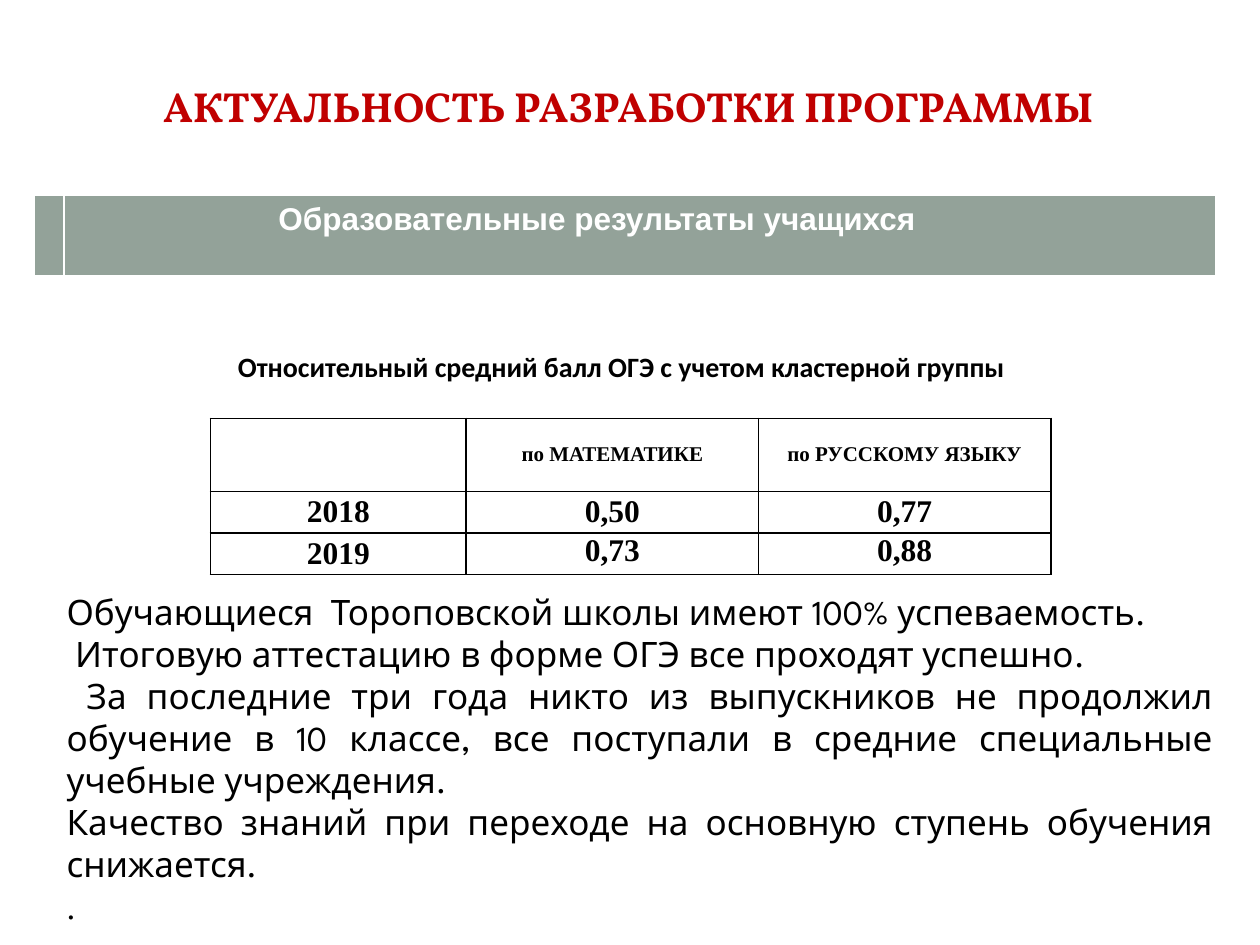
from lxml import etree
from pptx import Presentation
from pptx.dml.color import RGBColor
from pptx.enum.shapes import MSO_SHAPE
from pptx.enum.text import MSO_ANCHOR, PP_ALIGN
from pptx.oxml.ns import qn
from pptx.util import Inches, Pt

LEFT, CENTER, JUSTIFY = PP_ALIGN.LEFT, PP_ALIGN.CENTER, PP_ALIGN.JUSTIFY
TOP, MIDDLE = MSO_ANCHOR.TOP, MSO_ANCHOR.MIDDLE
RECT, ROUNDED = MSO_SHAPE.RECTANGLE, MSO_SHAPE.ROUNDED_RECTANGLE

RED = RGBColor(0xC0, 0x00, 0x00)
SAGE = RGBColor(0x93, 0xA2, 0x99)
BLACK = RGBColor(0x00, 0x00, 0x00)
WHITE = RGBColor(0xFF, 0xFF, 0xFF)

SERIF = "Times New Roman"


class SlideBuilder:
    def __init__(self, slide):
        self.slide = slide

    def style(self, p, font, size, color=BLACK, bold=True, align=LEFT):
        p.alignment = align
        p.font.name = font
        p.font.size = Pt(size)
        p.font.bold = bold
        p.font.color.rgb = color

    def panel(self, shape, box):
        sp = self.slide.shapes.add_shape(shape, *map(Inches, box))
        sp.shadow.inherit = False
        sp.fill.solid()
        sp.fill.fore_color.rgb = WHITE
        sp.line.fill.background()
        return sp

    def text(self, box, lines, anchor=MIDDLE, wrap=True, top=0.05, **style):
        sp = self.slide.shapes.add_textbox(*map(Inches, box))
        tf = sp.text_frame
        tf.word_wrap = wrap
        tf.vertical_anchor = anchor
        tf.margin_top = Inches(top)
        tf.text = "\n".join(lines)
        for p in tf.paragraphs:
            self.style(p, **style)
        return tf

    def table(self, left, top, cols, rows):
        frame = self.slide.shapes.add_table(
            len(rows), len(cols), Inches(left), Inches(top),
            Inches(sum(cols)), Inches(sum(rows)))
        table = frame.table
        table.first_row = table.horz_banding = False
        for col, width in zip(table.columns, cols):
            col.width = Inches(width)
        for row, height in zip(table.rows, rows):
            row.height = Inches(height)
        return table

    def cell(self, cell, text, border, fill=None, anchor=TOP,
             margins=(0.07, 0), **style):
        cell.margin_left = cell.margin_right = Inches(margins[0])
        cell.margin_top = cell.margin_bottom = Inches(margins[1])
        cell.vertical_anchor = anchor
        if fill is None:
            cell.fill.background()
        else:
            cell.fill.solid()
            cell.fill.fore_color.rgb = fill
        cell.text = text
        p = cell.text_frame.paragraphs[0]
        self.style(p, **style)
        self.borders(cell, border)
        return p

    def borders(self, cell, color):
        tc_pr = cell._tc.get_or_add_tcPr()
        for i, side in enumerate(("a:lnL", "a:lnR", "a:lnT", "a:lnB")):
            ln = etree.Element(qn(side), w=str(Pt(1)))
            fill = etree.SubElement(ln, qn("a:solidFill"))
            etree.SubElement(fill, qn("a:srgbClr"), val=str(color))
            tc_pr.insert(i, ln)


def main():
    prs = Presentation()
    prs.slide_width, prs.slide_height = Inches(10), Inches(7.5)
    s = SlideBuilder(prs.slides.add_slide(prs.slide_layouts[6]))

    # White page card and title panels
    card = s.panel(ROUNDED, (0.1, 0.11, 9.8, 7.29))
    card.adjustments[0] = 0.02
    s.panel(RECT, (0.3, 0.3, 9.4, 1.45))
    s.panel(RECT, (0.41, 0.41, 9.16, 1.22))

    # Title
    s.text((0.47, 0.45, 9.03, 0.78), ["АКТУАЛЬНОСТЬ РАЗРАБОТКИ ПРОГРАММЫ"],
           font="Vollkorn", size=24, color=RED, align=CENTER)

    # Section banner
    banner = s.table(0.27, 1.55, [0.23, 9.14], [0.64])
    for i, text in enumerate(["", "Образовательные результаты учащихся"]):
        s.cell(banner.cell(0, i), text, WHITE, fill=SAGE, margins=(0.1, 0.05),
               font="Arial", size=18, color=WHITE)
    banner.cell(0, 1).margin_left = Inches(1.7)

    # Exam score table
    scores = [
        ["", "по МАТЕМАТИКЕ", "по РУССКОМУ ЯЗЫКУ"],
        ["2018", "0,50", "0,77"],
        ["2019", "0,73", "0,88"],
    ]
    table = s.table(1.67, 3.32, [2.03, 2.32, 2.32], [0.58, 0.32, 0.32])
    for r, row in enumerate(scores):
        for c, text in enumerate(row):
            p = s.cell(table.cell(r, c), text, BLACK, font=SERIF,
                       size=18 if r else 12, align=CENTER,
                       anchor=TOP if r else MIDDLE)
            if r == 1 or (r == 2 and c == 0):
                p.line_spacing = 1.1

    # Table caption
    s.text((1.79, 2.72, 6.42, 0.37),
           ["Относительный средний балл ОГЭ с учетом кластерной группы"],
           wrap=False, font="Calibri", size=16)

    # Conclusions, starting below the table
    tf = s.text((0.43, 3.96, 9.29, 3.77), [
        "Обучающиеся  Тороповской школы имеют 100% успеваемость.",
        " Итоговую аттестацию в форме ОГЭ все проходят успешно.",
        " За последние три года никто из выпускников не продолжил обучение "
        "в 10 классе, все поступали в средние специальные учебные учреждения.",
        "Качество знаний при переходе на основную ступень обучения снижается.",
        ".",
    ], anchor=TOP, top=0.73, font="League Spartan", size=20, bold=False,
        align=JUSTIFY)
    tf.paragraphs[-1].font.name = SERIF

    prs.save("out.pptx")


if __name__ == "__main__":
    main()
